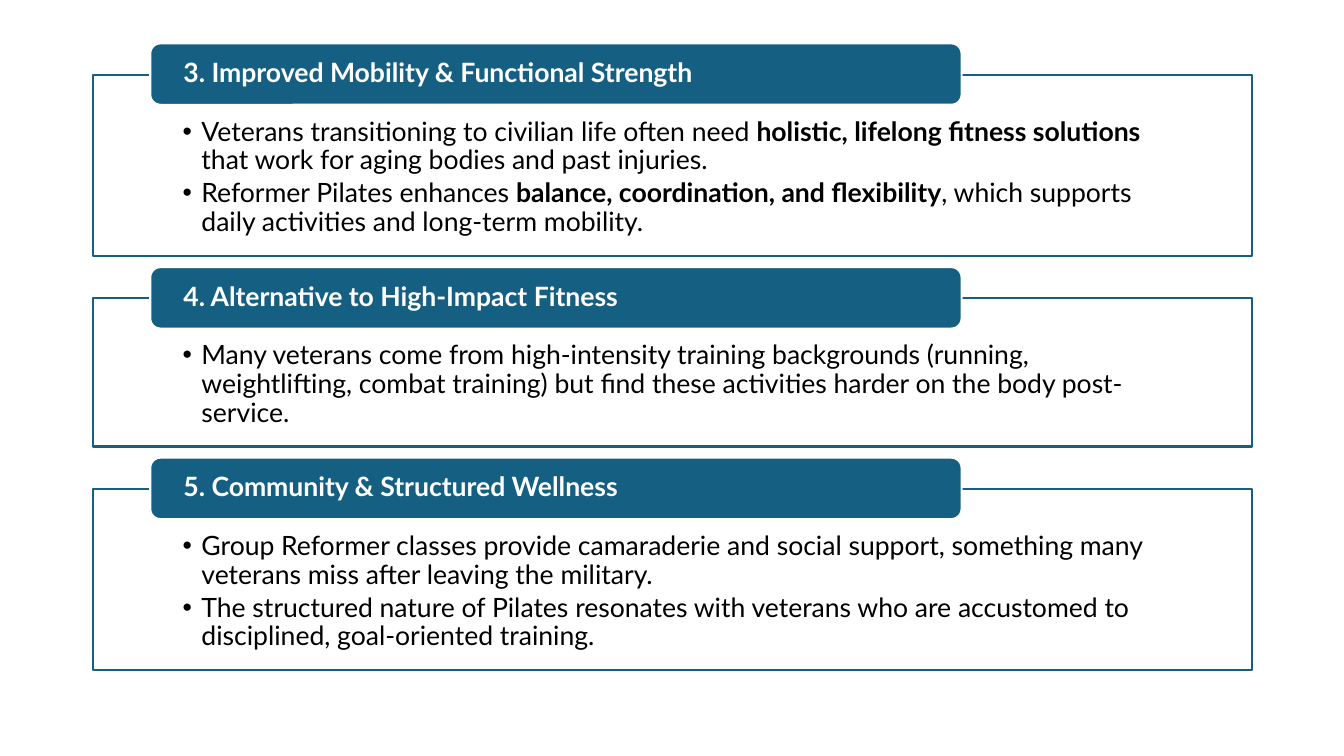
from dataclasses import dataclass
from typing import Any

from lxml import etree
from pptx import Presentation
from pptx.dml import color as dml
from pptx.enum import shapes, text
from pptx.oxml import ns
from pptx.util import Pt

COLORS = {"teal": "156082", "white": "FFFFFF", "black": "000000"}
LEFT, WIDTH, TOP, GAP = 66.24, 828, 53.28, 30.24
TAB_LEFT, TAB_WIDTH, TAB_HEIGHT, RISE = 107.28, 579.6, 43.92, 22.32
INDENT = 13.5

BODY = {
    "word_wrap": True, "vertical_anchor": text.MSO_ANCHOR.TOP,
    "margin_left": Pt(64.2), "margin_right": Pt(64.2),
    "margin_top": Pt(31.2), "margin_bottom": Pt(10.8),
}
TITLE = {
    "word_wrap": True, "vertical_anchor": text.MSO_ANCHOR.MIDDLE,
    "margin_left": Pt(21.6), "margin_right": Pt(21.6),
    "margin_top": 0, "margin_bottom": 0,
}
PARA = {"alignment": text.PP_ALIGN.LEFT, "line_spacing": 0.9}
FONT = {"name": "Lato", "size": Pt(19)}

Run = tuple[str, bool]


@dataclass
class Panel:
    title: str
    height: float
    points: list[list[Run]]


PANELS = [
    Panel("3. Improved Mobility & Functional Strength", 129.6, [
        [("Veterans transitioning to civilian life often need ", False),
         ("holistic, lifelong fitness solutions", True),
         (" that work for aging bodies and past injuries.", False)],
        [("Reformer Pilates enhances ", False),
         ("balance, coordination, and flexibility", True),
         (", which supports daily activities and long-term mobility.", False)],
    ]),
    Panel("4. Alternative to High-Impact Fitness", 105.84, [
        [("Many veterans come from high-intensity training backgrounds "
          "(running, weightlifting, combat training) but find these "
          "activities harder on the body post-service.", False)],
    ]),
    Panel("5. Community & Structured Wellness", 129.6, [
        [("Group Reformer classes provide camaraderie and social support, "
          "something many veterans miss after leaving the military.", False)],
        [("The structured nature of Pilates resonates with veterans who are "
          "accustomed to disciplined, goal-oriented training.", False)],
    ]),
]


def apply(target: Any, values: dict[str, Any]) -> None:
    for name, value in values.items():
        setattr(target, name, value)


def rgb(name: str) -> dml.RGBColor:
    return dml.RGBColor.from_string(COLORS[name])


def add_box(slide: Any, kind: Any, place: tuple[float, ...],
            fill: str, line: str, frame: dict[str, Any]) -> Any:
    box = slide.shapes.add_shape(kind, *map(Pt, place))
    box.shadow.inherit = False
    box.fill.solid()
    box.fill.fore_color.rgb = rgb(fill)
    box.line.color.rgb = rgb(line)
    box.line.width = Pt(1.5)
    apply(box.text_frame, frame)
    return box


def fade(box: Any, percent: int) -> None:
    tint = box.fill._xPr.find(ns.qn("a:solidFill"))[0]
    etree.SubElement(tint, ns.qn("a:alpha"), val=str(percent * 1000))


def add_bullet(para: Any) -> None:
    props = para._p.get_or_add_pPr()
    props.set("marL", str(Pt(INDENT)))
    props.set("indent", str(-Pt(INDENT)))
    etree.SubElement(props, ns.qn("a:buFont"), typeface="Arial")
    etree.SubElement(props, ns.qn("a:buChar"), char="•")


def write(para: Any, runs: list[Run], ink: str) -> None:
    apply(para, PARA)
    for words, bold in runs:
        run = para.add_run()
        run.text = words
        apply(run.font, FONT | {"bold": bold})
        run.font.color.rgb = rgb(ink)


def add_panel(slide: Any, panel: Panel, top: float) -> None:
    body = add_box(slide, shapes.MSO_SHAPE.RECTANGLE,
                   (LEFT, top, WIDTH, panel.height), "white", "teal", BODY)
    fade(body, 90)
    frame = body.text_frame
    for index, runs in enumerate(panel.points):
        para = frame.add_paragraph() if index else frame.paragraphs[0]
        add_bullet(para)
        apply(para, {"level": 1, "space_after": Pt(3)})
        write(para, runs, "black")
    tab = add_box(slide, shapes.MSO_SHAPE.ROUNDED_RECTANGLE,
                  (TAB_LEFT, top - RISE, TAB_WIDTH, TAB_HEIGHT),
                  "teal", "white", TITLE)
    write(tab.text_frame.paragraphs[0], [(panel.title, True)], "white")


def main() -> None:
    deck = Presentation()
    apply(deck, {"slide_width": Pt(960), "slide_height": Pt(540)})
    slide = deck.slides.add_slide(deck.slide_layouts[6])
    top = TOP
    for panel in PANELS:
        add_panel(slide, panel, top)
        top += panel.height + GAP
    deck.save("out.pptx")


if __name__ == "__main__":
    main()
